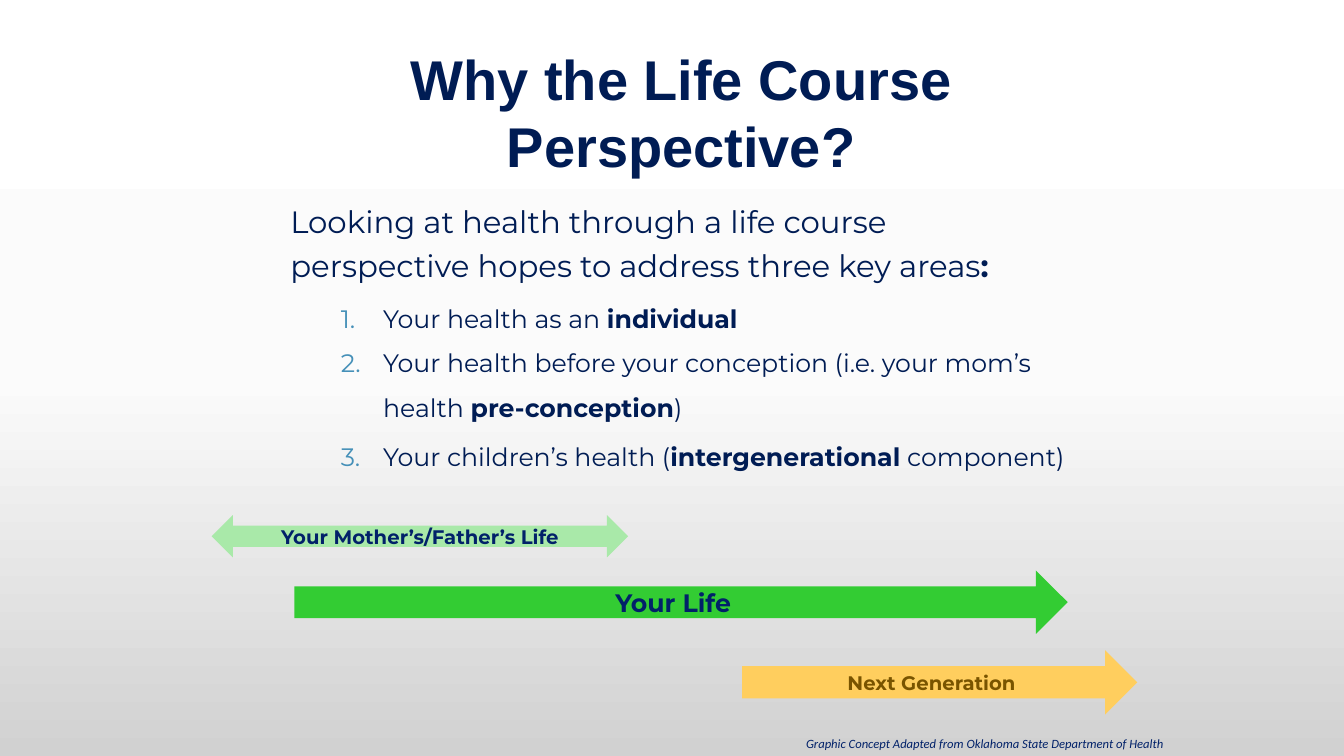
from copy import deepcopy
from typing import NamedTuple

from lxml import etree
from pptx import Presentation
from pptx.dml.color import RGBColor
from pptx.enum.shapes import MSO_SHAPE
from pptx.enum.text import MSO_ANCHOR, MSO_AUTO_SIZE, PP_ALIGN
from pptx.oxml.ns import qn
from pptx.util import Inches, Pt

RIGHT = MSO_SHAPE.RIGHT_ARROW
BOTH = MSO_SHAPE.LEFT_RIGHT_ARROW
MIDDLE, TOP = MSO_ANCHOR.MIDDLE, MSO_ANCHOR.TOP
CENTER, LEFT = PP_ALIGN.CENTER, PP_ALIGN.LEFT
FIXED = MSO_AUTO_SIZE.NONE
NAVY, BLUE, TEAL = "001C54", "012169", "4590B8"
SANS = "Montserrat"


class Style(NamedTuple):
    """Font settings for a run."""
    size: float
    color: str = NAVY
    font: str = SANS
    bold: bool = False
    slant: bool = False


class Span(NamedTuple):
    """Life span drawn as an arrow."""
    kind: MSO_SHAPE
    box: tuple[float, float, float, float]
    fill: str
    text: str
    style: Style


class Item(NamedTuple):
    """Body paragraph whose runs are plain and bold by turns."""
    runs: tuple[str, ...]
    size: float
    before: float
    listed: bool = True


SPANS = [
    Span(BOTH, (2.1, 5.11, 4.13, 0.42), "A9E9A9", "Your Mother’s/Father’s Life",
         Style(14, BLUE, bold=True)),
    Span(RIGHT, (2.92, 5.66, 7.67, 0.63), "33CC33", "Your Life",
         Style(18, BLUE, bold=True)),
    Span(RIGHT, (7.36, 6.45, 3.92, 0.64), "FFCE5E", "Next Generation",
         Style(14, "795400", bold=True)),
]
ITEMS = [
    Item(("Looking at health through a life course perspective hopes to "
          "address three key areas", ":"), 22, 4.4, False),
    Item(("Your health as an ", "individual"), 18, 3),
    Item(("Your health before your conception (i.e. your mom’s health ",
          "pre-conception", ")"), 18, 0),
    Item(("Your children’s health (", "intergenerational", " component)"), 18, 3),
]


def paint(color, code: str) -> None:
    """Set a colour from its hex code."""
    color.rgb = RGBColor.from_string(code)


def place(shape, box: tuple[float, float, float, float]) -> None:
    """Move and size a shape in inches."""
    shape.left, shape.top, shape.width, shape.height = map(Inches, box)


def frame(shape, anchor: MSO_ANCHOR):
    """Prepare a text frame and return its first paragraph."""
    text = shape.text_frame
    text.word_wrap, text.auto_size = True, FIXED
    text.vertical_anchor = anchor
    return text.paragraphs[0]


def write(para, text: str, style: Style) -> None:
    """Add one styled run."""
    run = para.add_run()
    run.text = text
    font = run.font
    font.name, font.size = style.font, Pt(style.size)
    font.bold, font.italic = style.bold, style.slant
    paint(font.color, style.color)


def label(shape, text: str, style: Style, anchor: MSO_ANCHOR = MIDDLE) -> None:
    """Fill a shape with one centred line."""
    para = frame(shape, anchor)
    para.alignment = CENTER
    write(para, text, style)


def shade(slide) -> None:
    """Paint the grey gradient behind the slide."""
    fill = slide.background.fill
    fill.gradient()
    fill.gradient_angle = 270
    first = fill.gradient_stops
    node = slide.element.find(".//" + qn("a:gsLst"))
    node.insert(1, deepcopy(node[0]))
    tones = [(0, "FFFFFF"), (0.5, "FBFBFB"), (1, "D1D1D1")]
    for stop, (spot, code) in zip(fill.gradient_stops, tones):
        stop.position = spot
        paint(stop.color, code)


def bullet(para, listed: bool) -> None:
    """Set the indent and the number of a paragraph."""
    props = para._p.get_or_add_pPr()
    props.set("marL", str(Inches(0.92 if listed else 0)))
    props.set("indent", str(Inches(-0.42 if listed else 0)))
    if not listed:
        etree.SubElement(props, qn("a:buNone"))
        return
    hue = etree.SubElement(props, qn("a:buClr"))
    etree.SubElement(hue, qn("a:srgbClr"), val=TEAL)
    etree.SubElement(props, qn("a:buFont"), typeface="+mj-lt")
    etree.SubElement(props, qn("a:buAutoNum"), type="arabicPeriod")


def fill_body(body) -> None:
    """Write the lead sentence and the numbered list."""
    para = frame(body, TOP)
    for rank, item in enumerate(ITEMS):
        if rank:
            para = body.text_frame.add_paragraph()
        para.level = int(item.listed)
        para.alignment = LEFT
        para.line_spacing = Pt(32)
        para.space_before = Pt(item.before)
        bullet(para, item.listed)
        for turn, text in enumerate(item.runs):
            write(para, text, Style(item.size, bold=turn % 2 == 1))


def draw(slide, span: Span) -> None:
    """Draw one life span arrow."""
    shape = slide.shapes.add_shape(span.kind, *map(Inches, span.box))
    shape.shadow.inherit = False
    shape.fill.solid()
    paint(shape.fill.fore_color, span.fill)
    shape.line.fill.background()
    label(shape, span.text, span.style)


def main() -> None:
    """Build and save the slide."""
    deck = Presentation()
    deck.slide_width, deck.slide_height = Inches(13.33), Inches(7.5)
    slide = deck.slides.add_slide(deck.slide_layouts[1])
    shade(slide)
    credit = slide.shapes.add_textbox(*map(Inches, (7.86, 7.25, 3.81, 0.25)))
    label(credit, "Graphic Concept Adapted from Oklahoma State Department of Health",
          Style(9, BLUE, "Calibri", slant=True), TOP)
    title, body = slide.shapes.title, slide.placeholders[1]
    place(title, (2.62, 0.79, 8.27, 0.64))
    label(title, "Why the Life Course Perspective?", Style(40, font="Arial", bold=True))
    place(body, (2.78, 1.88, 7.95, 3.06))
    fill_body(body)
    for span in SPANS:
        draw(slide, span)
    deck.save("out.pptx")


if __name__ == "__main__":
    main()
